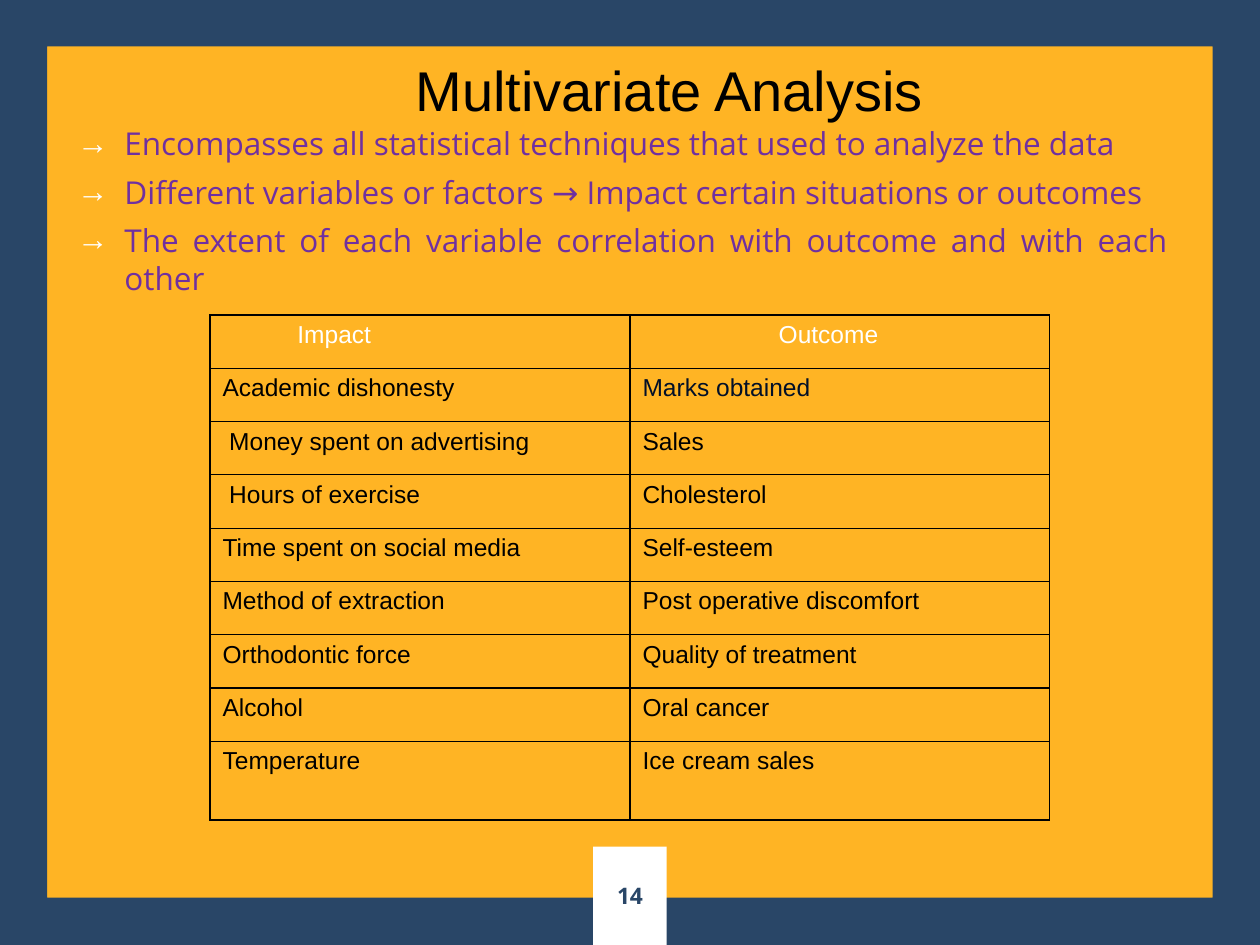
from dataclasses import dataclass

from lxml import etree
from pptx import Presentation
from pptx.dml.color import RGBColor
from pptx.enum.shapes import MSO_SHAPE
from pptx.enum.text import MSO_ANCHOR, PP_ALIGN
from pptx.oxml.ns import qn
from pptx.shapes.autoshape import Shape
from pptx.slide import Slide
from pptx.table import _Cell
from pptx.text.text import TextFrame, _Paragraph
from pptx.util import Pt

RECTANGLE = MSO_SHAPE.RECTANGLE
FRAME = MSO_SHAPE.FRAME
MIDDLE = MSO_ANCHOR.MIDDLE
CENTER = PP_ALIGN.CENTER
JUSTIFY = PP_ALIGN.JUSTIFY
LEFT = PP_ALIGN.LEFT

NAVY = RGBColor(0x29, 0x46, 0x67)
AMBER = RGBColor(0xFF, 0xA8, 0x00)
PURPLE = RGBColor(0x70, 0x30, 0xA0)
INK = RGBColor(0x02, 0x10, 0x28)
WHITE = RGBColor(0xFF, 0xFF, 0xFF)
BLACK = RGBColor(0x00, 0x00, 0x00)

SLIDE_WIDTH, SLIDE_HEIGHT = 720, 540
CELL_INSET = 7.2
ROW_HEIGHT, LAST_ROW_HEIGHT = 30.45, 45
COLUMN_WIDTH = 240


@dataclass(frozen=True)
class Box:
    left: float
    top: float
    width: float
    height: float

    def lengths(self) -> tuple[Pt, Pt, Pt, Pt]:
        return Pt(self.left), Pt(self.top), Pt(self.width), Pt(self.height)


@dataclass(frozen=True)
class TextStyle:
    font: str
    size: float
    color: RGBColor
    bold: bool = False


@dataclass(frozen=True)
class Entry:
    text: str
    color: RGBColor = BLACK
    inset: float = CELL_INSET


BACKDROP = Box(0, -0.5, SLIDE_WIDTH, SLIDE_HEIGHT + 0.5)
NUMBER_TAB = Box(339, 483.75, 42, 56.25)
TITLE_BOX = Box(230.4, 28, 320.4, 46)
BULLET_BOX = Box(28, 67.5, 646.5, 163)
TABLE_BOX = Box(120, 180, 2 * COLUMN_WIDTH, 8 * ROW_HEIGHT + LAST_ROW_HEIGHT)

BULLETS = [
    "Encompasses all statistical techniques that used to analyze the data",
    "Different variables or factors → Impact certain situations or outcomes",
    "The extent of each variable correlation with outcome and with each other",
]
ROWS = [
    (Entry("Impact", WHITE, 50), Entry("Outcome", WHITE, 85)),
    (Entry("Academic dishonesty"), Entry("Marks obtained", INK)),
    (Entry("Money spent on advertising", inset=11), Entry("Sales")),
    (Entry("Hours of exercise", inset=11), Entry("Cholesterol")),
    (Entry("Time spent on social media"), Entry("Self-esteem")),
    (Entry("Method of extraction"), Entry("Post operative discomfort")),
    (Entry("Orthodontic force"), Entry("Quality of treatment")),
    (Entry("Alcohol"), Entry("Oral cancer")),
    (Entry("Temperature"), Entry("Ice cream sales")),
]


def style_paragraph(paragraph: _Paragraph, style: TextStyle, alignment: PP_ALIGN = LEFT) -> None:
    paragraph.alignment = alignment
    font = paragraph.font
    font.name = style.font
    font.size = Pt(style.size)
    font.bold = style.bold
    font.color.rgb = style.color


def add_color(parent: etree._Element, color: RGBColor) -> None:
    etree.SubElement(parent, qn("a:srgbClr"), val=str(color))


def add_panel(slide: Slide, kind: MSO_SHAPE, box: Box, color: RGBColor) -> Shape:
    shape = slide.shapes.add_shape(kind, *box.lengths())
    shape.shadow.inherit = False
    shape.fill.solid()
    shape.fill.fore_color.rgb = color
    shape.line.fill.background()
    return shape


def add_text_frame(slide: Slide, box: Box) -> TextFrame:
    frame = slide.shapes.add_textbox(*box.lengths()).text_frame
    frame.word_wrap = True
    return frame


def add_backdrop(slide: Slide) -> None:
    background = add_panel(slide, RECTANGLE, BACKDROP, AMBER)
    color = background.fill._xPr.find(".//" + qn("a:srgbClr"))
    etree.SubElement(color, qn("a:alpha"), val="86000")
    border = add_panel(slide, FRAME, BACKDROP, NAVY)
    border.adjustments[0] = 0.05


def add_number(slide: Slide, number: str) -> None:
    frame = add_panel(slide, RECTANGLE, NUMBER_TAB, WHITE).text_frame
    frame.vertical_anchor = MIDDLE
    frame.text = number
    style_paragraph(frame.paragraphs[0], TextStyle("Open Sans", 13, NAVY, True), CENTER)


def add_title(slide: Slide, title: str) -> None:
    frame = add_text_frame(slide, TITLE_BOX)
    frame.text = title
    style_paragraph(frame.paragraphs[0], TextStyle("Arial", 32, BLACK))


def set_bullet(paragraph: _Paragraph) -> None:
    properties = paragraph._p.get_or_add_pPr()
    properties.set("marL", str(Pt(36)))
    properties.set("indent", str(Pt(-27)))
    add_color(etree.SubElement(properties, qn("a:buClr")), WHITE)
    etree.SubElement(properties, qn("a:buFont"), typeface="Arial")
    etree.SubElement(properties, qn("a:buChar"), char="→")


def add_bullets(slide: Slide, lines: list[str]) -> None:
    frame = add_text_frame(slide, BULLET_BOX)
    frame.text = "\n".join(lines)
    for paragraph in frame.paragraphs:
        paragraph.space_before = Pt(6)
        set_bullet(paragraph)
        style_paragraph(paragraph, TextStyle("Open Sans", 18, PURPLE), JUSTIFY)


def set_borders(cell: _Cell) -> None:
    properties = cell._tc.get_or_add_tcPr()
    for side in ("a:lnL", "a:lnR", "a:lnT", "a:lnB"):
        line = etree.SubElement(properties, qn(side), w=str(Pt(0.75)))
        add_color(etree.SubElement(line, qn("a:solidFill")), BLACK)


def fill_cell(cell: _Cell, entry: Entry) -> None:
    cell.text = entry.text
    cell.margin_left = Pt(entry.inset)
    set_borders(cell)
    cell.fill.background()
    style_paragraph(cell.text_frame.paragraphs[0], TextStyle("Arial", 14, entry.color))


def add_impact_table(slide: Slide, rows: list[tuple[Entry, Entry]]) -> None:
    table = slide.shapes.add_table(len(rows), 2, *TABLE_BOX.lengths()).table
    table.first_row = False
    table.horz_banding = False
    for column in table.columns:
        column.width = Pt(COLUMN_WIDTH)
    for row_index, entries in enumerate(rows):
        is_last = row_index == len(rows) - 1
        table.rows[row_index].height = Pt(LAST_ROW_HEIGHT if is_last else ROW_HEIGHT)
        for column_index, entry in enumerate(entries):
            fill_cell(table.cell(row_index, column_index), entry)


def main() -> None:
    presentation = Presentation()
    presentation.slide_width = Pt(SLIDE_WIDTH)
    presentation.slide_height = Pt(SLIDE_HEIGHT)
    slide = presentation.slides.add_slide(presentation.slide_layouts[6])
    add_backdrop(slide)
    add_number(slide, "14")
    add_bullets(slide, BULLETS)
    add_title(slide, "Multivariate Analysis")
    add_impact_table(slide, ROWS)
    presentation.save("out.pptx")


if __name__ == "__main__":
    main()
